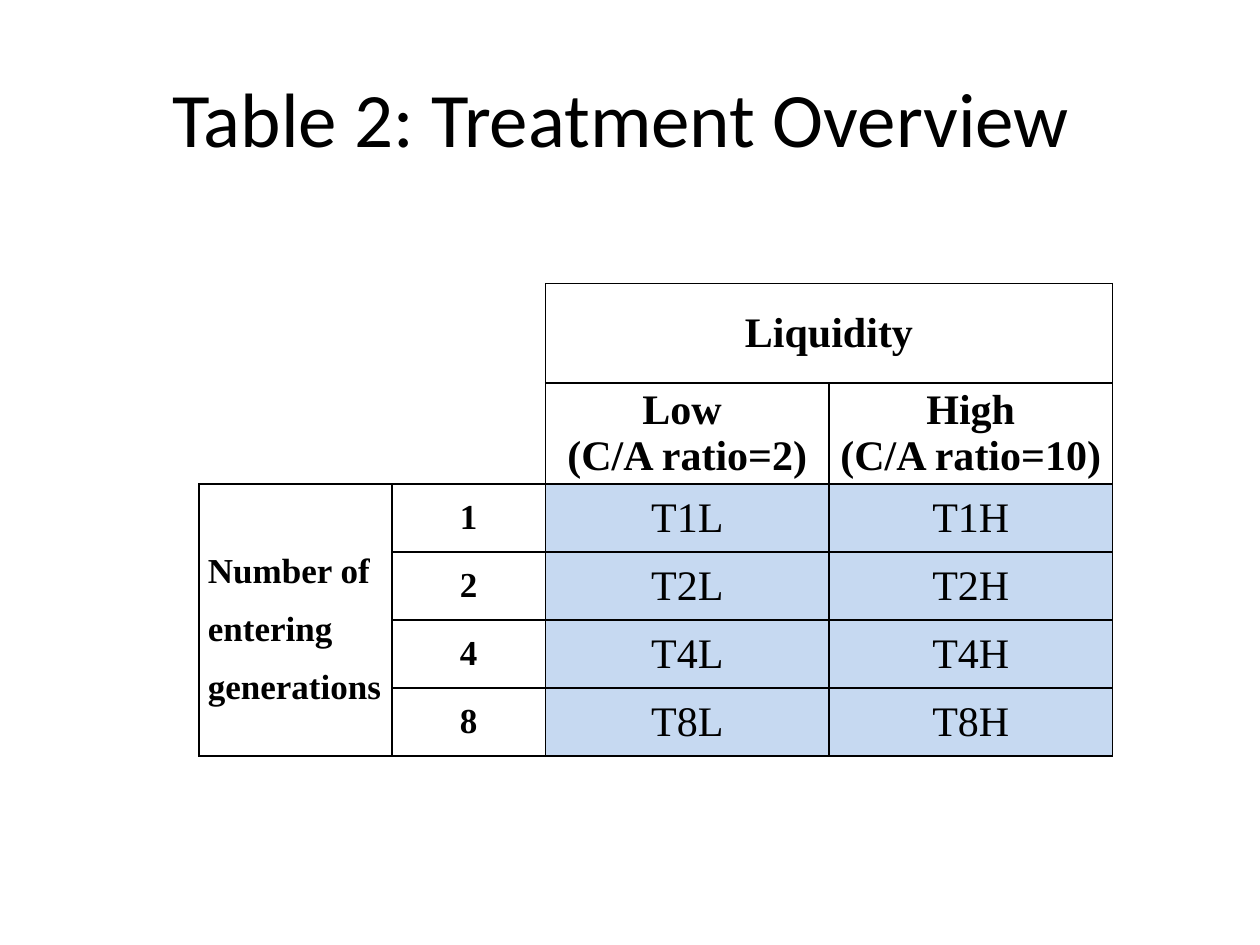
from lxml.etree import SubElement
from pptx import Presentation
from pptx.dml.color import RGBColor
from pptx.enum.text import MSO_ANCHOR, PP_ALIGN
from pptx.oxml.ns import qn
from pptx.util import Inches, Pt

BLACK = RGBColor(0x00, 0x00, 0x00)
BLUE = RGBColor(0xC6, 0xD9, 0xF1)
SIDES = "LRTB"


class Deck:
    """Hold the style and the current slide, and add each kind of element."""

    head = "Calibri"
    body = "Times New Roman"

    def __init__(self, wide, high):
        self.prs = Presentation()
        self.prs.slide_width = Inches(wide)
        self.prs.slide_height = Inches(high)
        self.slide = self.prs.slides.add_slide(self.prs.slide_layouts[6])

    def text(self, para, words, size, font, bold=False, align=PP_ALIGN.CENTER):
        para.alignment = align
        for i, line in enumerate(words.split("\n")):
            if i:
                para.add_line_break()
            run = para.add_run()
            run.text = line
            run.font.size = Pt(size)
            run.font.name = font
            run.font.bold = bold
            run.font.color.rgb = BLACK

    def title(self, words, left, top, wide, high):
        box = self.slide.shapes.add_textbox(
            Inches(left), Inches(top), Inches(wide), Inches(high))
        frame = box.text_frame
        frame.word_wrap = True
        frame.vertical_anchor = MSO_ANCHOR.MIDDLE
        self.text(frame.paragraphs[0], words, 44, self.head)

    def table(self, left, top, cols, rows):
        shape = self.slide.shapes.add_table(
            len(rows), len(cols), Inches(left), Inches(top),
            Inches(sum(cols)), Inches(sum(rows)))
        grid = shape.table
        grid.first_row = grid.horz_banding = False
        for col, wide in zip(grid.columns, cols):
            col.width = Inches(wide)
        for row, high in zip(grid.rows, rows):
            row.height = Inches(high)
        return grid

    def frame(self, cell, sides=SIDES, fill=None):
        props = cell._tc.get_or_add_tcPr()
        for side in SIDES:
            line = SubElement(props, qn(f"a:ln{side}"), w=str(Pt(1)))
            if side in sides:
                paint = SubElement(line, qn("a:solidFill"))
                SubElement(paint, qn("a:srgbClr"), val=str(BLACK))
            else:
                SubElement(line, qn("a:noFill"))
        if fill is None:
            cell.fill.background()
        else:
            cell.fill.solid()
            cell.fill.fore_color.rgb = fill

    def cell(self, cell, words, size=24, bold=True, align=PP_ALIGN.CENTER):
        cell.vertical_anchor = MSO_ANCHOR.MIDDLE
        cell.margin_left = cell.margin_right = Inches(0.07)
        cell.margin_top = cell.margin_bottom = 0
        para = cell.text_frame.paragraphs[0]
        self.text(para, words, size, self.body, bold, align)
        return para


def main():
    deck = Deck(10, 7.5)
    deck.title("Table 2: Treatment Overview ", 0.5, 0.3, 9, 1.25)
    grid = deck.table(1.58, 2.25, [1.53, 1.22, 2.25, 2.25],
                      [0.79] * 2 + [0.54] * 4)
    blank = {(0, 0): "", (0, 1): "R", (1, 0): "B", (1, 1): "RB"}
    for r in range(6):
        for c in range(4):
            fill = BLUE if r > 1 and c > 1 else None
            deck.frame(grid.cell(r, c), blank.get((r, c), SIDES), fill)
    grid.cell(0, 2).merge(grid.cell(0, 3))
    grid.cell(2, 0).merge(grid.cell(5, 0))

    deck.cell(grid.cell(0, 2), "Liquidity")
    deck.cell(grid.cell(1, 2), "Low \n(C/A ratio=2)")
    deck.cell(grid.cell(1, 3), "High\n(C/A ratio=10)")
    label = deck.cell(grid.cell(2, 0), "Number of entering generations",
                      20, align=PP_ALIGN.LEFT)
    label.line_spacing = 1.5
    for r, count in enumerate([1, 2, 4, 8], 2):
        deck.cell(grid.cell(r, 1), str(count), 20)
        for c, level in enumerate("LH", 2):
            deck.cell(grid.cell(r, c), f"T{count}{level}", bold=False)
    deck.prs.save("out.pptx")


if __name__ == "__main__":
    main()
